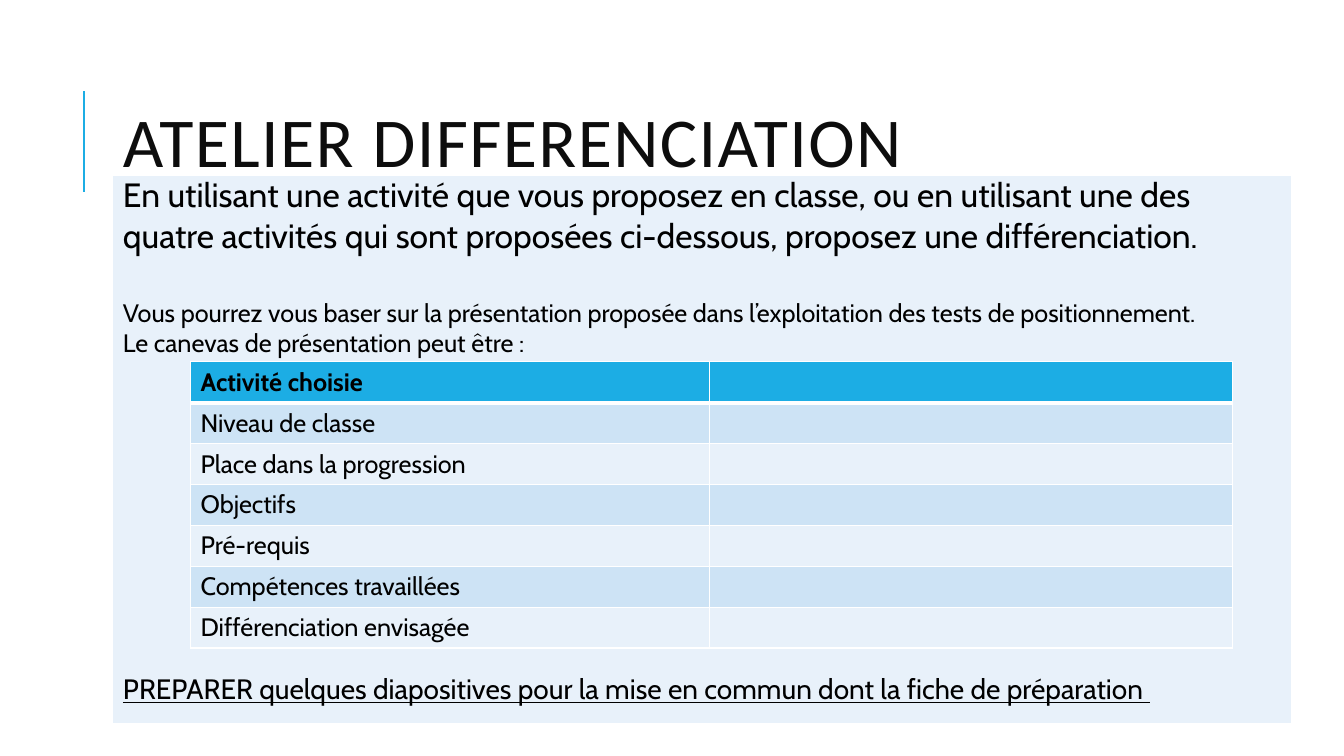
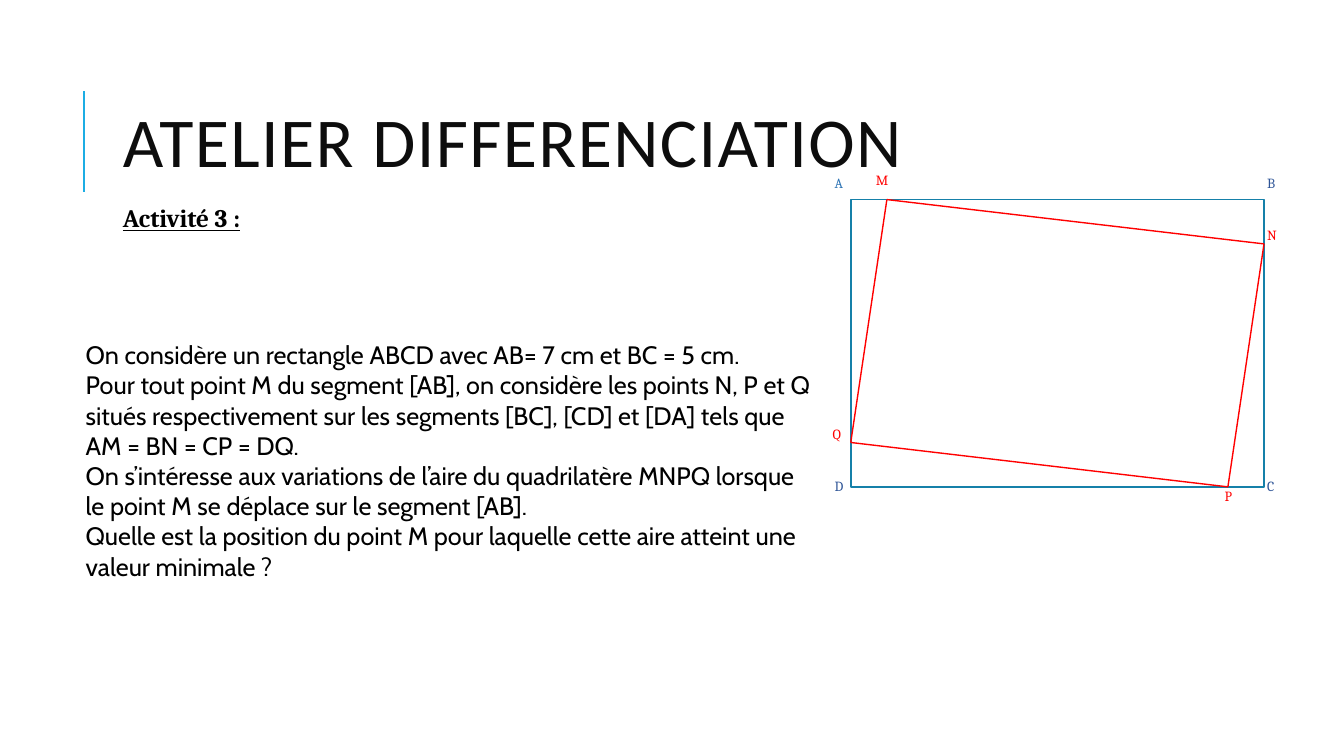
from lxml.etree import SubElement
from pptx import Presentation
from pptx.dml.color import RGBColor
from pptx.enum.shapes import MSO_CONNECTOR as Connector, MSO_SHAPE as Shape
from pptx.enum.text import MSO_ANCHOR as Anchor, MSO_AUTO_SIZE as AutoSize, PP_ALIGN as Align
from pptx.oxml.ns import qn
from pptx.util import Inches, Pt

COLUMNS, ROWS = 160, 90  # grid over the whole slide
COLORS = {
    "accent": "1CADE4", "title": "0D0D0D", "text": "000000", "white": "FFFFFF",
    "pale": "E8F1FA", "band": "CDE3F5", "rectangle": "1580A9",
    "inner": "FF0000", "corner": "2F5597", "first_corner": "2E74B5",
}
TITLE_FONT, BODY_FONT, MATH_FONT = "Calibri", "Cabin", "Cambria"
TITLE_ONLY, TITLE_AND_BODY = 5, 1


def rgb(color):
    return RGBColor.from_string(COLORS[color])


def write(frame, text, size=18, font=BODY_FONT, color="text", bold=False, underline=False,
          line=1.0, before=0, after=0, tracking=0, unbulleted=False):
    """Add one paragraph; a newline in the text becomes a line break."""
    paragraph = frame.add_paragraph() if frame.text else frame.paragraphs[0]
    paragraph.alignment = Align.LEFT
    paragraph.line_spacing = line
    paragraph.space_before, paragraph.space_after = Pt(before), Pt(after)
    if unbulleted:
        properties = paragraph._p.get_or_add_pPr()
        properties.set("marL", "0")
        properties.set("indent", "0")
        SubElement(properties, qn("a:buNone"))
    for index, part in enumerate(text.split("\n")):
        if index:
            paragraph.add_line_break()
        run = paragraph.add_run()
        run.text = part
        run.font.name, run.font.size = font, Pt(size)
        run.font.bold, run.font.underline = bold, underline
        run.font.color.rgb = rgb(color)
        if tracking:
            run._r.get_or_add_rPr().set("spc", str(tracking * 100))


class Deck:
    def __init__(self):
        self.prs = Presentation()
        self.prs.slide_width, self.prs.slide_height = Inches(13.33), Inches(7.5)
        self.slide = None

    def x(self, columns):
        return round(self.prs.slide_width * columns / COLUMNS)

    def y(self, rows):
        return round(self.prs.slide_height * rows / ROWS)

    def box(self, left, top, width, height):
        return self.x(left), self.y(top), self.x(width), self.y(height)

    def place(self, shape, *area):
        shape.left, shape.top, shape.width, shape.height = self.box(*area)

    def new_slide(self, title, layout):
        self.slide = self.prs.slides.add_slide(self.prs.slide_layouts[layout])
        self.line((10, 22.8), (10, 10.8), "accent", 1.5)
        heading = self.slide.shapes.title
        self.place(heading, 13.44, 7.68, 127.56, 19.68)
        frame = heading.text_frame
        frame.vertical_anchor, frame.auto_size = Anchor.MIDDLE, AutoSize.NONE
        write(frame, title, size=50, font=TITLE_FONT, color="title", line=0.8, tracking=1)

    def body(self, paragraphs, *area):
        holder = self.slide.placeholders[1]
        self.place(holder, *area)
        holder.text_frame.auto_size = AutoSize.NONE
        for text in paragraphs:
            write(holder.text_frame, text, unbulleted=True)

    def text(self, text, *area, wrap=True, inset=None, **style):
        frame = self.slide.shapes.add_textbox(*self.box(*area)).text_frame
        frame.word_wrap = wrap
        if inset is not None:
            frame.margin_left = frame.margin_right = inset
            frame.margin_top = frame.margin_bottom = inset
        write(frame, text, **style)

    def line(self, start, end, color, width):
        connector = self.slide.shapes.add_connector(
            Connector.STRAIGHT, self.x(start[0]), self.y(start[1]), self.x(end[0]), self.y(end[1]))
        connector.line.color.rgb, connector.line.width = rgb(color), Pt(width)
        SubElement(connector._element.spPr, qn("a:effectLst"))

    def outline(self, color, width, *area):
        rectangle = self.slide.shapes.add_shape(Shape.RECTANGLE, *self.box(*area))
        rectangle.shadow.inherit = False
        rectangle.fill.background()
        rectangle.line.color.rgb, rectangle.line.width = rgb(color), Pt(width)

    def table(self, left, top, widths, heights):
        table = self.slide.shapes.add_table(
            len(heights), len(widths), *self.box(left, top, sum(widths), sum(heights))).table
        table.first_row = table.horz_banding = False
        for column, width in zip(table.columns, widths):
            column.width = self.x(width)
        for row, height in zip(table.rows, heights):
            row.height = self.y(height)
        return table

    def paint(self, cell, fill, top=1, bottom=1):
        """Fill a cell and give it white borders."""
        properties = cell._tc.get_or_add_tcPr()
        for side, width in (("L", 1), ("R", 1), ("T", top), ("B", bottom)):
            border = SubElement(properties, qn(f"a:ln{side}"), w=str(Pt(width)))
            SubElement(SubElement(border, qn("a:solidFill")), qn("a:srgbClr"), val=COLORS["white"])
        cell.fill.solid()
        cell.fill.fore_color.rgb = rgb(fill)


def instructions_slide(deck):
    deck.new_slide("ATELIER DIFFERENCIATION", TITLE_ONLY)

    # Instruction panel, with room left for the outline table
    panel = deck.table(13.44, 20.88, [140.28], [65.28]).cell(0, 0)
    deck.paint(panel, "pale")
    panel.margin_top = panel.margin_bottom = 0
    frame = panel.text_frame
    write(frame, "En utilisant une activité que vous proposez en classe, ou en utilisant une des "
                 "quatre activités qui sont proposées ci-dessous, proposez une différenciation.",
          size=24)
    write(frame, "Vous pourrez vous baser sur la présentation proposée dans l’exploitation "
                 "des tests de positionnement.", before=29)
    write(frame, "Le canevas de présentation peut être :")
    write(frame, "PREPARER quelques diapositives pour la mise en commun dont la fiche "
                 "de préparation ", size=20, underline=True, line=1.07, before=222)

    # Outline of the presentation to prepare
    topics = ["Activité choisie", "Niveau de classe", "Place dans la progression", "Objectifs",
              "Pré-requis", "Compétences travaillées", "Différenciation envisagée"]
    outline = deck.table(22.68, 43.08, [61.8, 62.28], [4.87] * len(topics))
    for row, topic in enumerate(topics):
        header = row == 0
        fill = "accent" if header else "band" if row % 2 else "pale"
        for cell in outline.rows[row].cells:
            deck.paint(cell, fill, top=3 if row == 1 else 1, bottom=3 if header else 1)
        write(outline.cell(row, 0).text_frame, topic, bold=header)


def activity_slide(deck):
    deck.new_slide("ATELIER DIFFERENCIATION", TITLE_AND_BODY)

    # Statement of the problem
    deck.text("Activité 3 :", 13.44, 23.28, 16.92, 5.16, wrap=False, font=MATH_FONT,
              bold=True, underline=True, line=1.07)
    deck.body([
        "On considère un rectangle ABCD avec AB= 7 cm et BC = 5 cm.",
        "Pour tout point M du segment [AB], on considère les points N, P et Q situés "
        "respectivement sur les segments [BC], [CD] et [DA] tels que\nAM = BN = CP = DQ.",
        "On s’intéresse aux variations de l’aire du quadrilatère MNPQ lorsque le point M "
        "se déplace sur le segment [AB].\nQuelle est la position du point M pour laquelle "
        "cette aire atteint une valeur minimale ?",
    ], 9, 39.8, 89.4, 30.2)

    # Rectangle ABCD and inscribed quadrilateral MNPQ
    left, top, width, height = 101.28, 23.76, 49.2, 34.2
    right, bottom = left + width, top + height
    across, down = 4.3, 5.28
    deck.outline("rectangle", 1.25, left, top, width, height)
    vertices = [(left + across, top), (right, top + down),
                (right - across, bottom), (left, bottom - down)]
    for start, end in zip(vertices, vertices[1:] + vertices[:1]):
        deck.line(start, end, "inner", 1)

    # Point names
    west, east, north, south = 99.36, 150.84, 20.64, 56.76
    points = [
        ("A", west, north, "first_corner"), ("B", east, north, "corner"),
        ("C", east, south, "corner"), ("D", west, south, "corner"),
        ("M", 104.28, 20.28, "inner"), ("N", east, 26.88, "inner"),
        ("P", 145.8, 57.96, "inner"), ("Q", 99.12, 50.52, "inner"),
    ]
    for name, x, y, color in points:
        deck.text(name, x, y, 3.24, 4.08, inset=0, size=10, font=MATH_FONT,
                  color=color, line=1.06, after=8)


def main():
    deck = Deck()
    instructions_slide(deck)
    activity_slide(deck)
    deck.prs.save("out.pptx")


if __name__ == "__main__":
    main()
